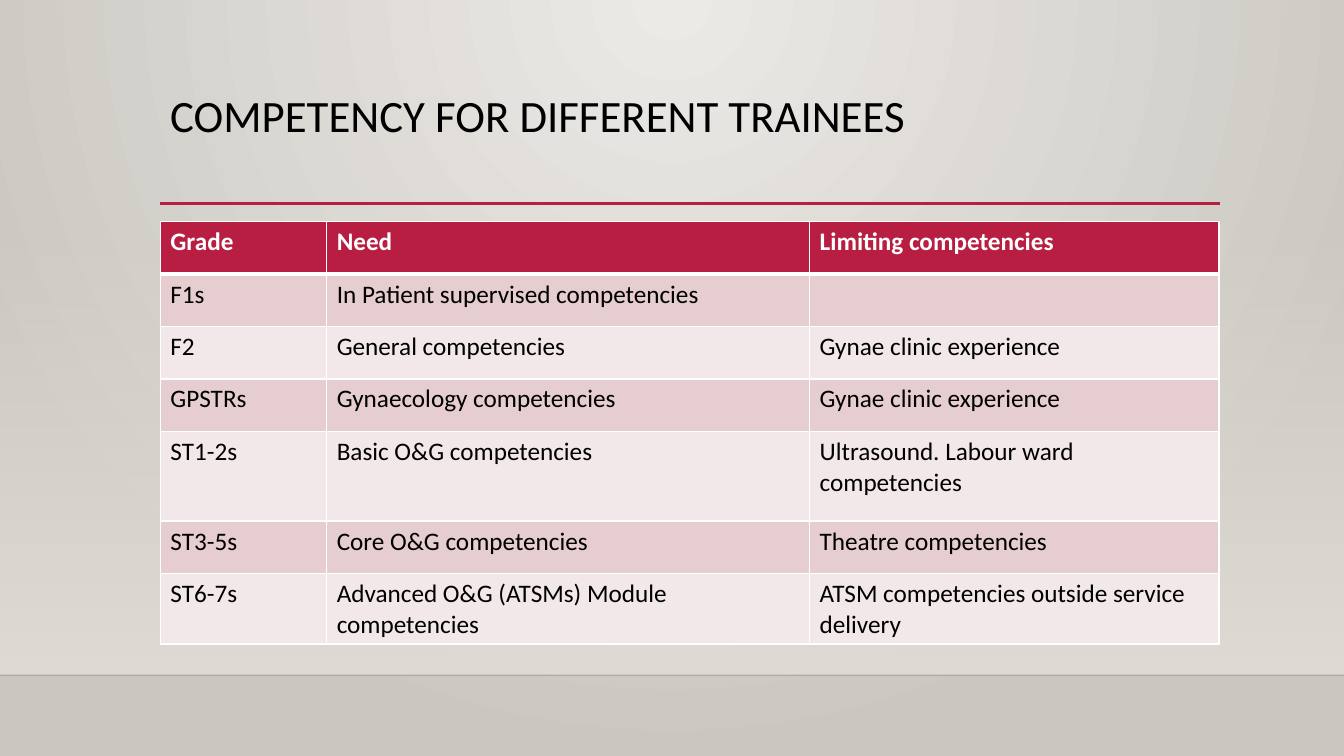
from lxml.etree import SubElement
from pptx import Presentation
from pptx.dml.color import RGBColor
from pptx.enum.shapes import MSO_CONNECTOR, MSO_SHAPE
from pptx.enum.text import MSO_ANCHOR
from pptx.oxml.ns import qn
from pptx.util import Inches, Pt

# Content
TITLE = "COMPETENCY FOR DIFFERENT TRAINEES"
ROWS = [
    ("Grade", "Need", "Limiting competencies"),
    ("F1s", "In Patient supervised competencies", ""),
    ("F2", "General competencies", "Gynae clinic experience"),
    ("GPSTRs", "Gynaecology competencies", "Gynae clinic experience"),
    ("ST1-2s", "Basic O&G competencies", "Ultrasound. Labour ward competencies"),
    ("ST3-5s", "Core O&G competencies", "Theatre competencies"),
    ("ST6-7s", "Advanced O&G (ATSMs) Module competencies",
     "ATSM competencies outside service delivery"),
]

# Colours and font
BLACK = RGBColor(0x00, 0x00, 0x00)
FLOOR_EDGE = RGBColor(0x00, 0x00, 0x01)
WHITE = RGBColor(0xFF, 0xFF, 0xFF)
CRIMSON = RGBColor(0xB7, 0x1E, 0x42)
BANDS = (RGBColor(0xF3, 0xE8, 0xE9), RGBColor(0xE6, 0xCD, 0xCF))
GLOW = RGBColor(0xEC, 0xEA, 0xE7)
STONE = RGBColor(0xCA, 0xC7, 0xC1)
WALL = RGBColor(0xDF, 0xDB, 0xD5)
FONT = "Calibri"

# Layout in inches
WIDTH, HEIGHT = 13.33, 7.5
LEFT, CONTENT_WIDTH = 1.59, 10.5
TITLE_TOP, TITLE_HEIGHT = 0.88, 0.73
RULE_TOP, RULE_RIGHT = 2.02, 12.1
TABLE_TOP, FLOOR_TOP = 2.2, 6.7
COLUMN_WIDTHS = (1.65, 4.79, 4.06)
ROW_HEIGHT, TALL_ROW, TALL_HEIGHT = 0.52, 4, 0.89


def set_text(frame, text, size=18, color=BLACK, bold=False, line_spacing=None):
    frame.word_wrap = True
    paragraph = frame.paragraphs[0]
    paragraph.font.size = Pt(size)
    if line_spacing:
        paragraph.line_spacing = line_spacing
    if text:
        run = paragraph.add_run()
        run.text = text
        font = run.font
        font.name, font.size, font.bold = FONT, Pt(size), bold
        font.color.rgb = color


def set_gradient(fill, start, end):
    fill.gradient()
    for stop, color in zip(fill.gradient_stops, (start, end)):
        stop.color.rgb = color


def set_alpha(element, percent):
    color = next(element.iter(qn("a:srgbClr")))
    SubElement(color, qn("a:alpha"), val=str(percent * 1000))


def add_line(slide, left, right, top, color, width):
    line = slide.shapes.add_connector(
        MSO_CONNECTOR.STRAIGHT, Inches(left), Inches(top), Inches(right), Inches(top))
    line.line.color.rgb = color
    line.line.width = Pt(width)
    SubElement(line._element.spPr, qn("a:effectLst"))
    return line


def set_borders(cell, bottom):
    properties = cell._tc.get_or_add_tcPr()
    for side, width in (("L", 1), ("R", 1), ("T", 1), ("B", bottom)):
        border = SubElement(properties, qn(f"a:ln{side}"), w=str(Pt(width)))
        fill = SubElement(border, qn("a:solidFill"))
        SubElement(fill, qn("a:srgbClr"), val=str(WHITE))


def add_background(slide):
    # Radial glow from the top centre
    set_gradient(slide.background.fill, GLOW, STONE)
    gradient = next(slide._element.iter(qn("a:gradFill")))
    gradient.remove(gradient.find(qn("a:lin")))
    circle = SubElement(gradient, qn("a:path"), path="circle")
    SubElement(circle, qn("a:fillToRect"), l="43000", t="0", r="43000", b="100000")

    # Wall fading in towards the floor
    wall_top = 2.21
    wall = slide.shapes.add_shape(
        MSO_SHAPE.RECTANGLE, 0, Inches(wall_top), Inches(WIDTH), Inches(FLOOR_TOP - wall_top))
    wall.shadow.inherit = False
    wall.line.fill.background()
    set_gradient(wall.fill, WALL, WALL)
    wall.fill.gradient_angle = 270
    set_alpha(wall._element.spPr, 0)

    # Floor edge
    edge = add_line(slide, 0, WIDTH, FLOOR_TOP, FLOOR_EDGE, 1)
    set_alpha(edge._element.spPr, 20)


def add_title(slide):
    title = slide.shapes.add_textbox(
        Inches(LEFT), Inches(TITLE_TOP), Inches(CONTENT_WIDTH), Inches(TITLE_HEIGHT))
    title.text_frame.vertical_anchor = MSO_ANCHOR.TOP
    set_text(title.text_frame, TITLE, size=32, line_spacing=0.9)
    add_line(slide, LEFT, RULE_RIGHT, RULE_TOP, CRIMSON, 2.5)


def add_competency_table(slide):
    heights = [TALL_HEIGHT if i == TALL_ROW else ROW_HEIGHT for i in range(len(ROWS))]
    table = slide.shapes.add_table(
        len(ROWS), len(COLUMN_WIDTHS), Inches(LEFT), Inches(TABLE_TOP),
        Inches(CONTENT_WIDTH), Inches(sum(heights))).table
    for column, width in zip(table.columns, COLUMN_WIDTHS):
        column.width = Inches(width)
    for i, (texts, height) in enumerate(zip(ROWS, heights)):
        table.rows[i].height = Inches(height)
        header = i == 0
        for cell, text in zip(table.rows[i].cells, texts):
            set_borders(cell, bottom=3 if header else 1)
            cell.fill.solid()
            cell.fill.fore_color.rgb = CRIMSON if header else BANDS[i % 2]
            set_text(cell.text_frame, text, color=WHITE if header else BLACK, bold=header)


def main():
    presentation = Presentation()
    presentation.slide_width = Inches(WIDTH)
    presentation.slide_height = Inches(HEIGHT)
    slide = presentation.slides.add_slide(presentation.slide_layouts[6])
    add_background(slide)
    add_title(slide)
    add_competency_table(slide)
    presentation.save("out.pptx")


if __name__ == "__main__":
    main()
